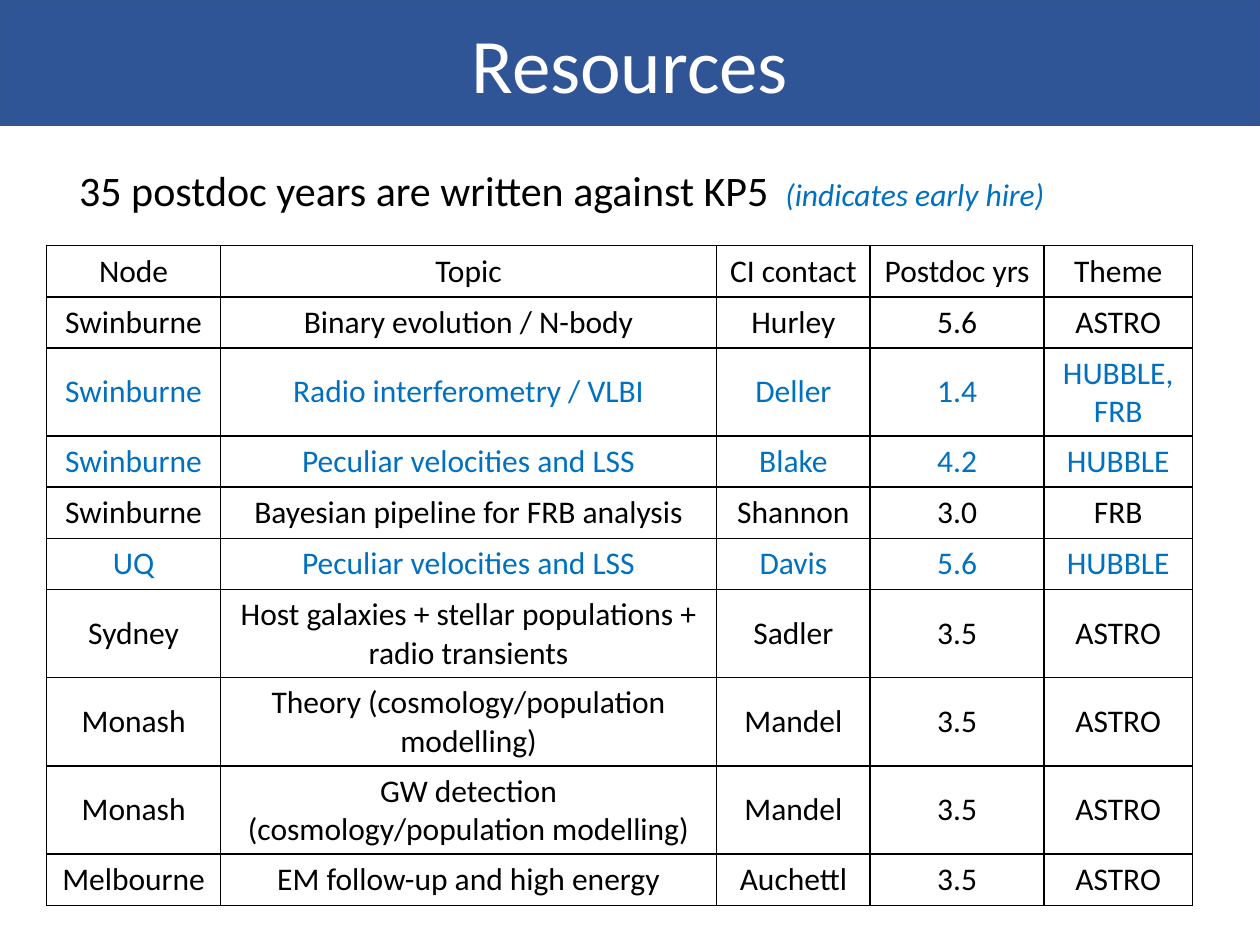
from dataclasses import dataclass

from lxml.etree import SubElement as Sub
from pptx import Presentation
from pptx.dml.color import RGBColor as Rgb
from pptx.enum.text import MSO_ANCHOR as Anchor, PP_ALIGN as Align
from pptx.oxml.ns import qn
from pptx.util import Pt


@dataclass(frozen=True)
class Theme:
    """Colours, font and type sizes of the slide."""
    font: str = "Calibri"
    band: Rgb = Rgb(0x2F, 0x55, 0x97)
    edge: Rgb = Rgb(0x32, 0x54, 0x91)
    white: Rgb = Rgb(255, 255, 255)
    ink: Rgb = Rgb(0, 0, 0)
    early: Rgb = Rgb(0x00, 0x70, 0xC0)
    title: int = 44
    lead: int = 24
    small: int = 18


@dataclass(frozen=True)
class Box:
    """A region in points."""
    left: float
    top: float
    width: float
    height: float

    def spot(self):
        """Give left, top, width and height as lengths."""
        return [Pt(n) for n in (self.left, self.top, self.width, self.height)]


THEME = Theme()
SHARES = (99.3, 283.5, 87.8, 99.3, 84.8)
HEAD = ("Node", "Topic", "CI contact", "Postdoc yrs", "Theme")
POSTS = (
    ("Swinburne", "Binary evolution / N-body", "Hurley", "5.6", "ASTRO"),
    ("Swinburne", "Radio interferometry / VLBI", "Deller", "1.4", "HUBBLE, FRB"),
    ("Swinburne", "Peculiar velocities and LSS", "Blake", "4.2", "HUBBLE"),
    ("Swinburne", "Bayesian pipeline for FRB analysis", "Shannon", "3.0", "FRB"),
    ("UQ", "Peculiar velocities and LSS", "Davis", "5.6", "HUBBLE"),
    ("Sydney", "Host galaxies + stellar populations + radio transients",
     "Sadler", "3.5", "ASTRO"),
    ("Monash", "Theory (cosmology/population modelling)", "Mandel", "3.5", "ASTRO"),
    ("Monash", "GW detection (cosmology/population modelling)",
     "Mandel", "3.5", "ASTRO"),
    ("Melbourne", "EM follow-up and high energy", "Auchettl", "3.5", "ASTRO"),
)
EARLY = {2, 3, 5}


def style(run, size, color, italic=False):
    """Format one run of text."""
    font = run.font
    font.name, font.size, font.italic = THEME.font, Pt(size), italic
    font.color.rgb = color


def banner(slide, box, text):
    """Place the title as a filled band."""
    title = slide.shapes.title
    title.left, title.top, title.width, title.height = box.spot()
    title.fill.solid()
    title.fill.fore_color.rgb = THEME.band
    title.line.color.rgb = THEME.edge
    title.line.width = Pt(1)
    frame = title.text_frame
    frame.text = text
    frame.vertical_anchor = Anchor.MIDDLE
    para = frame.paragraphs[0]
    para.alignment = Align.CENTER
    style(para.runs[0], THEME.title, THEME.white)


def summary(slide, box, text, key):
    """Place the lead line with its colour key."""
    frame = slide.shapes.add_textbox(*box.spot()).text_frame
    frame.word_wrap = True
    para = frame.paragraphs[0]
    for words, size, color, italic in (
            (text, THEME.lead, THEME.ink, False),
            (key, THEME.small, THEME.early, True)):
        run = para.add_run()
        run.text = words
        style(run, size, color, italic)


def border(cell):
    """Draw a thin line on each side of a cell."""
    props = cell._tc.get_or_add_tcPr()
    for side in ("a:lnL", "a:lnR", "a:lnT", "a:lnB"):
        line = Sub(props, qn(side), w=str(Pt(1)))
        fill = Sub(line, qn("a:solidFill"))
        Sub(fill, qn("a:srgbClr"), val=str(THEME.ink))


def entry(cell, text, color):
    """Fill one table cell."""
    border(cell)
    cell.fill.background()
    cell.text = text
    cell.vertical_anchor = Anchor.MIDDLE
    para = cell.text_frame.paragraphs[0]
    para.alignment = Align.CENTER
    style(para.runs[0], THEME.small, color)


def roster(slide, box, rows):
    """Place the table of postdoc posts."""
    table = slide.shapes.add_table(len(rows), len(HEAD), *box.spot()).table
    table.first_row = table.horz_banding = False
    for col, share in zip(table.columns, SHARES):
        col.width = Pt(box.width * share / sum(SHARES))
    for r, row in enumerate(rows):
        table.rows[r].height = Pt(box.height / len(rows))
        color = THEME.early if r in EARLY else THEME.ink
        for c, text in enumerate(row):
            entry(table.cell(r, c), text, color)


def main():
    """Build and save the slide."""
    deck = Presentation()
    deck.slide_width, deck.slide_height = Pt(720), Pt(540)
    slide = deck.slides.add_slide(deck.slide_layouts.get_by_name("Title Only"))
    banner(slide, Box(0, 0, 720, 71.3), "Resources")
    summary(slide, Box(38.2, 90.7, 648, 36),
            "35 postdoc years are written against KP5 ", " (indicates early hire)")
    roster(slide, Box(26.7, 140.4, 654.7, 292), (HEAD, *POSTS))
    deck.save("out.pptx")


if __name__ == "__main__":
    main()
